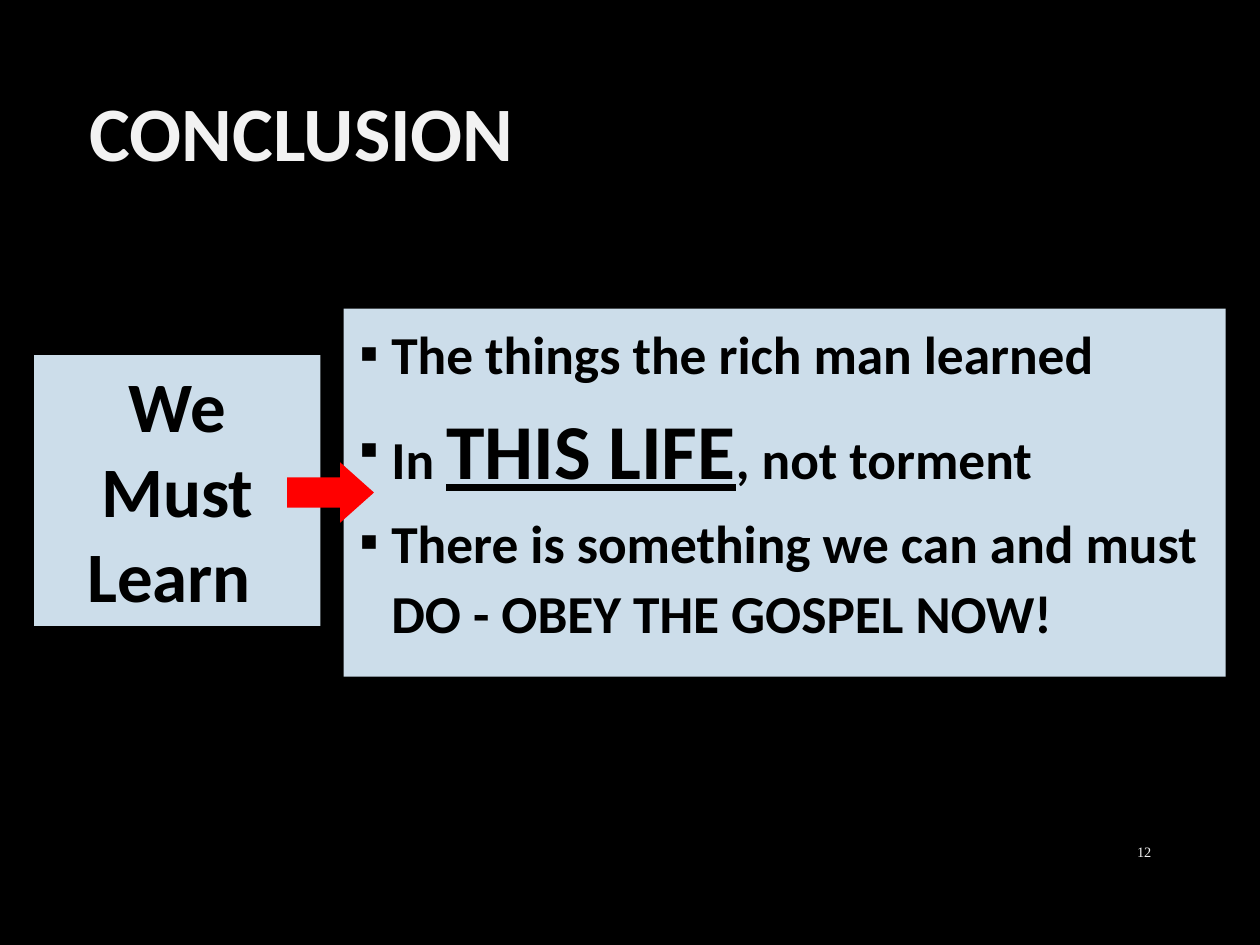
from lxml.etree import SubElement
from pptx import Presentation
from pptx.dml.color import RGBColor
from pptx.enum.shapes import MSO_SHAPE as Shape
from pptx.enum.text import MSO_ANCHOR as Anchor, PP_ALIGN as Align
from pptx.oxml.ns import qn
from pptx.util import Cm, Pt

BLACK, PALE_BLUE, RED, OFF_WHITE = "000000", "CCDDEA", "FF0000", "F2F2F2"


def add_run(p, text, size, color=BLACK, font="Calibri", bold=True, underline=False):
    r = p.add_run()
    r.text = text
    r.font.name, r.font.size = font, Pt(size)
    r.font.bold, r.font.underline = bold, underline
    r.font.color.rgb = RGBColor.from_string(color)


def add_filled(kind, color, left, top, width, height):
    sp = slide.shapes.add_shape(kind, Cm(left), Cm(top), Cm(width), Cm(height))
    sp.shadow.inherit = False
    sp.fill.solid()
    sp.fill.fore_color.rgb = RGBColor.from_string(color)
    sp.line.fill.background()
    sp.text_frame.vertical_anchor = Anchor.TOP
    return sp


prs = Presentation()
prs.slide_width, prs.slide_height = Cm(25.4), Cm(19.05)
slide = prs.slides.add_slide(prs.slide_layouts[5])
slide.background.fill.solid()
slide.background.fill.fore_color.rgb = RGBColor.from_string(BLACK)

# Title
title = slide.shapes.title
title.left, title.top, title.width, title.height = Cm(1.55), Cm(1.83), Cm(10.46), Cm(1.83)
title.text_frame.vertical_anchor = Anchor.MIDDLE
p = title.text_frame.paragraphs[0]
p.alignment, p.line_spacing = Align.LEFT, 0.9
add_run(p, "CONCLUSION", 44, OFF_WHITE)

# Lessons: each bullet is a list of (text, size, underline)
lessons = [
    [("The things the rich man learned", 30.5, False)],
    [("In ", 30.5, False), ("THIS LIFE", 44.4, True), (", not torment", 30.5, False)],
    [("There is something we can and must DO - OBEY THE GOSPEL NOW!", 30.5, False)],
]
tf = add_filled(Shape.RECTANGLE, PALE_BLUE, 6.93, 6.22, 17.78, 7.42).text_frame
for i, lesson in enumerate(lessons):
    p = tf.paragraphs[0] if i == 0 else tf.add_paragraph()
    p.alignment, p.line_spacing, p.space_after = Align.LEFT, 1.1, Pt(4.5)
    pPr = p._p.get_or_add_pPr()
    pPr.set("marL", str(Cm(0.71)))
    pPr.set("indent", str(Cm(-0.64)))
    SubElement(pPr, qn("a:buFont"), typeface="Calibri")
    SubElement(pPr, qn("a:buChar"), char="▪")
    for text, size, underline in lesson:
        add_run(p, text, size, underline=underline)

# Label and the arrow that leads to the lessons
tf = add_filled(Shape.RECTANGLE, PALE_BLUE, 0.69, 7.16, 5.77, 5.46).text_frame
tf.margin_left = tf.margin_right = Cm(0.6)
p = tf.paragraphs[0]
p.alignment = Align.CENTER
add_run(p, "We Must Learn ", 40.5)

arrow = add_filled(Shape.RIGHT_ARROW, RED, 5.79, 9.32, 1.75, 1.22)
arrow.adjustments[1] = 0.56

# Slide number
number = slide.shapes.add_textbox(Cm(21.89), Cm(16.66), Cm(1.57), Cm(1.02))
tf = number.text_frame
tf.word_wrap, tf.vertical_anchor = True, Anchor.MIDDLE
p = tf.paragraphs[0]
p.alignment = Align.RIGHT
add_run(p, "12", 8.2, OFF_WHITE, font="Times New Roman", bold=False)

prs.save("out.pptx")
